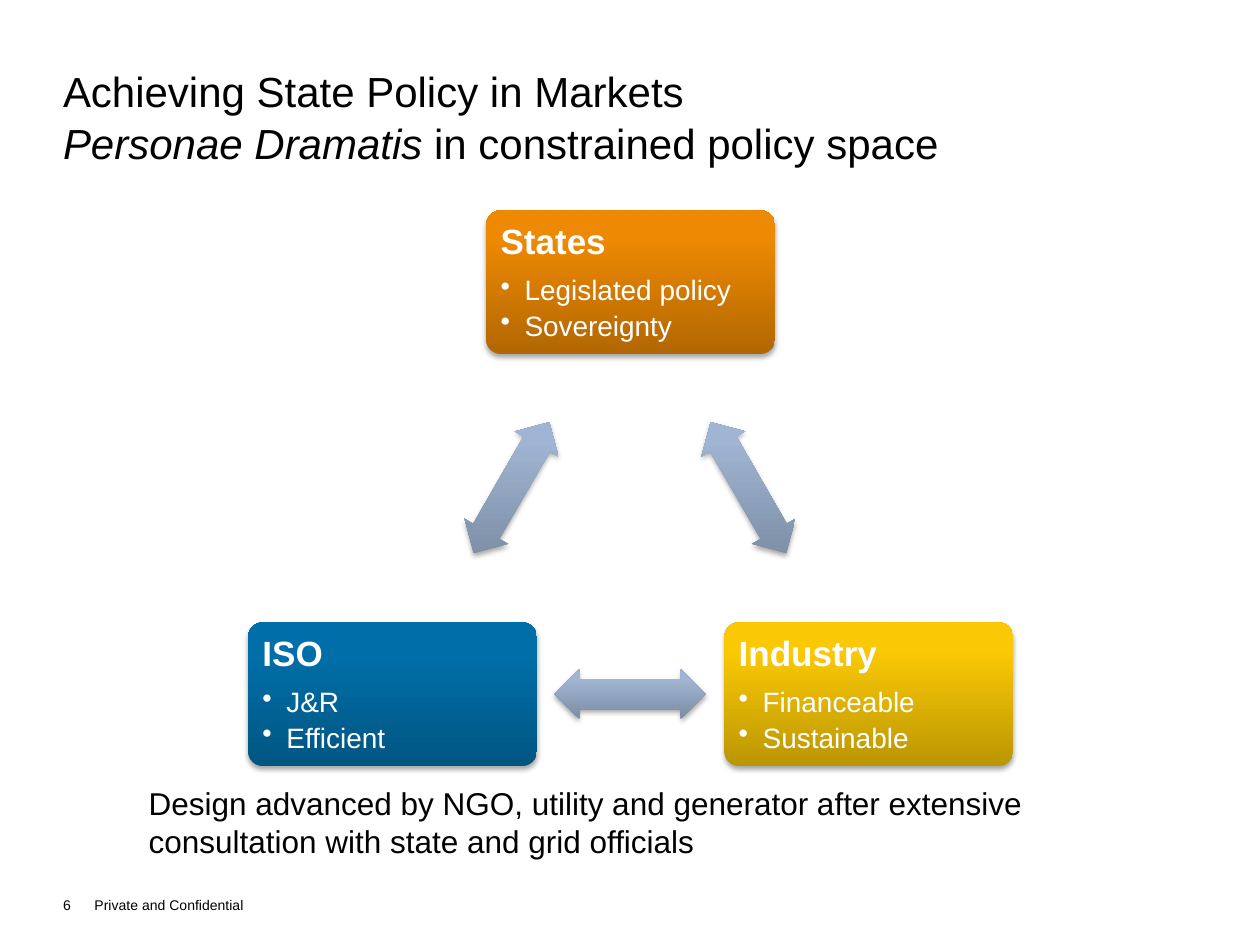
from lxml import etree
from pptx import Presentation
from pptx import util as u
from pptx.dml.color import RGBColor
from pptx.enum import shapes, text
from pptx.oxml.ns import qn

PX = 9144  # EMU per px, 100 px to the inch


def px(n):
    return u.Emu(n * PX)


def rgb(code):
    return RGBColor.from_string(code)


class Deck:
    font, ink, light = "Arial", "000000", "FFFFFF"

    def __init__(self, width, height):
        self.prs = Presentation()
        self.prs.slide_width, self.prs.slide_height = px(width), px(height)
        self.s = self.prs.slides.add_slide(self.prs.slide_layouts[5])

    def style(self, p, size, color, bold=False):
        for r in p.runs:
            f = r.font
            f.name, f.size, f.bold = self.font, u.Pt(size), bold
            f.color.rgb = rgb(color)

    def frame(self, tf, inset=0, anchor=text.MSO_ANCHOR.TOP, wrap=True):
        tf.auto_size = text.MSO_AUTO_SIZE.NONE
        tf.word_wrap, tf.vertical_anchor = wrap, anchor
        tf.margin_left = tf.margin_right = px(inset)
        tf.margin_top = tf.margin_bottom = px(inset)

    def title(self, box, first, italic, rest):
        sp = self.s.shapes.title
        sp.left, sp.top, sp.width, sp.height = map(px, box)
        self.frame(sp.text_frame)
        p = sp.text_frame.paragraphs[0]
        p.alignment, p.line_spacing = text.PP_ALIGN.LEFT, 1.04
        p.add_run().text = first
        p.add_line_break()
        r = p.add_run()
        r.text, r.font.italic = italic, True
        p.add_run().text = rest
        self.style(p, 24, self.ink)

    def text(self, box, words, size, anchor=text.MSO_ANCHOR.BOTTOM, wrap=True):
        tf = self.s.shapes.add_textbox(*map(px, box)).text_frame
        self.frame(tf, anchor=anchor, wrap=wrap)
        tf.text = words
        self.style(tf.paragraphs[0], size, self.ink)

    def shape(self, kind, box, dark, bright):
        sp = self.s.shapes.add_shape(kind, *map(px, box))
        # Dark at the bottom, bright from 80% up, whatever the rotation
        sp.fill.gradient()
        sp.fill.gradient_angle = 90
        for stop, color, pos in zip(sp.fill.gradient_stops, (dark, bright), (0, 0.8)):
            stop.color.rgb, stop.position = rgb(color), pos
        spPr = sp._element.spPr
        spPr.find(qn("a:gradFill")).set("rotWithShape", "0")
        sp.line.fill.background()
        # Soft shadow straight below
        sp.shadow.inherit = False
        shadow = etree.SubElement(
            spPr.find(qn("a:effectLst")), qn("a:outerShdw"), blurRad=str(u.Pt(3.1)),
            dist=str(u.Pt(1.8)), dir="5400000", rotWithShape="0")
        color = etree.SubElement(shadow, qn("a:srgbClr"), val="000000")
        etree.SubElement(color, qn("a:alpha"), val="35000")
        return sp

    def card(self, box, dark, bright, heading, items):
        sp = self.shape(shapes.MSO_SHAPE.ROUNDED_RECTANGLE, box, dark, bright)
        sp.adjustments[0] = 0.1
        tf = sp.text_frame
        self.frame(tf, inset=8)
        tf.text = "\n".join([heading, *items])
        for i, p in enumerate(tf.paragraphs):
            p.alignment, p.line_spacing = text.PP_ALIGN.LEFT, 0.9
            p.space_after = u.Pt(3 if i else 8)
            if i:
                pPr = p._p.get_or_add_pPr()
                pPr.set("marL", str(px(19)))
                pPr.set("indent", str(px(-19)))
                etree.SubElement(pPr, qn("a:buChar"), char="•")
            self.style(p, 16 if i else 20, self.light, bold=not i)

    def arrow(self, center_x, center_y, angle):
        w, h = 120, 40
        box = (center_x - w // 2, center_y - h // 2, w, h)
        sp = self.shape(shapes.MSO_SHAPE.LEFT_RIGHT_ARROW, box, "7B8CA2", "A0B5D3")
        sp.adjustments[0], sp.adjustments[1] = 0.6, 0.5
        sp.rotation = angle


def main():
    d = Deck(1000, 750)
    d.title((50, 50, 900, 44), "Achieving State Policy in Markets",
            "Personae Dramatis ", "in constrained policy space")

    # Triangle of actors, symmetric about the slide's centre line
    mid, spread, top, base = 500, 189, 167, 494
    w, h = 229, 114
    cards = [
        (mid, top, "B26702", "ED8903", "States", ["Legislated policy", "Sovereignty"]),
        (mid + spread, base, "BB9604", "FAC805", "Industry", ["Financeable", "Sustainable"]),
        (mid - spread, base, "005682", "006FA9", "ISO", ["J&R", "Efficient"]),
    ]
    for x, y, *look in cards:
        d.card((x - w // 2, y, w, h), *look)

    # Arrows halfway along each side
    side_y = (top + base + h) // 2
    d.arrow(mid + spread // 2, side_y, 60)
    d.arrow(mid, base + h // 2, 180)
    d.arrow(mid - spread // 2, side_y, 300)

    # Closing remark and footer
    d.text((118, 622, 763, 65),
           "Design advanced by NGO, utility and generator after extensive "
           "consultation with state and grid officials", 18,
           anchor=text.MSO_ANCHOR.TOP)
    d.text((50, 701, 31, 24), "6", 8)
    d.text((75, 712, 120, 13), "Private and Confidential", 8, wrap=False)

    d.prs.save("out.pptx")


if __name__ == "__main__":
    main()
